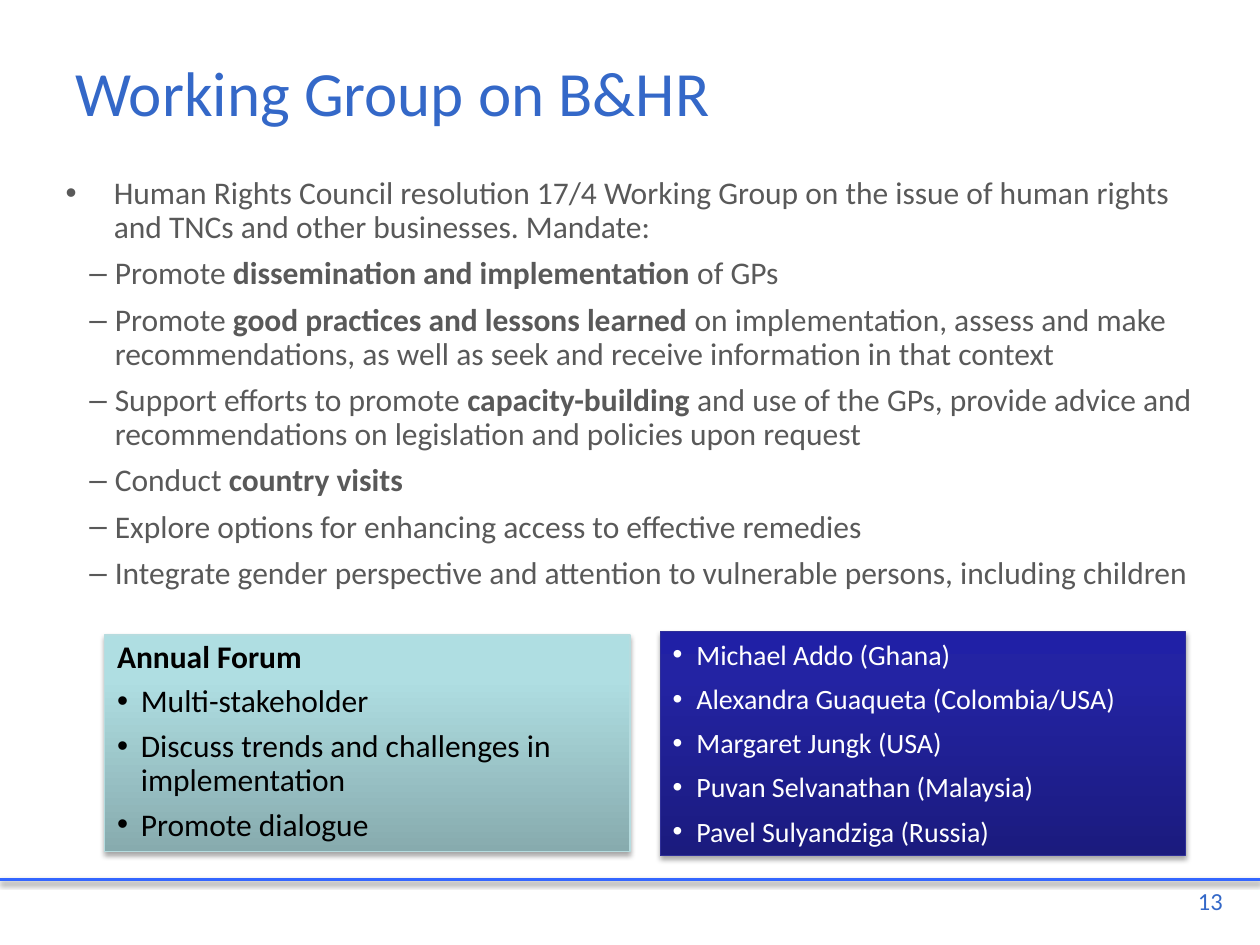
import lxml.etree
import pptx
import pptx.dml.color
import pptx.enum.shapes
import pptx.enum.text
import pptx.oxml
import pptx.oxml.ns
import pptx.util
from pptx.util import Cm, Pt

ANCHOR = pptx.enum.text.MSO_ANCHOR
ALIGN = pptx.enum.text.PP_ALIGN
FONT = "Calibri"
COLORS = {
    "title": "3468C8", "rule": "3366FF", "body": "595959",
    "white": "FFFFFF", "black": "000000",
    "navy edge": "2F2F98", "teal edge": "B6DCDF",
}
NAVY = [(0, "1B1B7E"), (80, "2323A3"), (100, "2020A6")]
TEAL = [(0, "87ABAE"), (80, "AFDEE2"), (100, "AFE0E4")]

LEAD = ("Human Rights Council resolution 17/4 Working Group on the issue of "
        "human rights and TNCs and other businesses. Mandate:")
# Every second part is bold.
TASKS = [
    ["Promote ", "dissemination and implementation ", "of GPs"],
    ["Promote ", "good practices and lessons learned ",
     "on implementation, assess and make recommendations, as well as seek "
     "and receive information in that context"],
    ["Support efforts to promote ", "capacity-building",
     " and use of the GPs, provide advice and recommendations on legislation "
     "and policies upon request"],
    ["Conduct ", "country visits"],
    ["Explore options for enhancing access to effective remedies"],
    ["Integrate gender perspective and attention to vulnerable persons, "
     "including children"],
]
FORUM = ["Multi-stakeholder", "Discuss trends and challenges in implementation",
         "Promote dialogue"]
PEOPLE = ["Michael Addo (Ghana)", "Alexandra Guaqueta (Colombia/USA)",
          "Margaret Jungk (USA)", "Puvan Selvanathan (Malaysia)",
          "Pavel Sulyandziga (Russia)"]


def rgb(name):
    return pptx.dml.color.RGBColor.from_string(COLORS[name])


def place(shape, box):
    shape.left, shape.top, shape.width, shape.height = (Cm(n) for n in box)


def style(run, size, color, bold=False):
    run.font.name = FONT
    run.font.size = Pt(size)
    run.font.bold = bold
    run.font.color.rgb = rgb(color)


def indent(para, mark, left, hang):
    """Give the paragraph a bullet that hangs to the left of its text."""
    props = para._p.get_or_add_pPr()
    props.set("marL", str(Cm(left)))
    props.set("indent", str(-Cm(hang)))
    sub = lxml.etree.SubElement
    sub(props, pptx.oxml.ns.qn("a:buFont")).set("typeface", "Arial")
    sub(props, pptx.oxml.ns.qn("a:buChar")).set("char", mark)


def add_para(frame, parts, first, gap, size, color, lines=1.0, bullet=None,
             bold=False):
    """Write one paragraph whose parts alternate between plain and bold."""
    para = frame.paragraphs[0] if first else frame.add_paragraph()
    if bullet:
        indent(para, *bullet)
    para.alignment = ALIGN.LEFT
    para.line_spacing = lines
    para.space_before = Pt(0 if first else gap)
    for i, part in enumerate(parts):
        run = para.add_run()
        run.text = part
        style(run, size, color, bold or i % 2 == 1)
    return para


def add_shadow(shape, alpha, dist):
    props = shape._element.spPr
    for old in props.findall(pptx.oxml.ns.qn("a:effectLst")):
        props.remove(old)
    props.append(pptx.oxml.parse_xml(
        f'<a:effectLst {pptx.oxml.ns.nsdecls("a")}>'
        f'<a:outerShdw blurRad="{Pt(3.1)}" dist="{Pt(dist)}" dir="5400000" '
        f'rotWithShape="0"><a:srgbClr val="{COLORS["black"]}">'
        f'<a:alpha val="{alpha * 1000}"/></a:srgbClr></a:outerShdw>'
        '</a:effectLst>'))


def add_fade(shape, stops):
    """Fill the shape with a gradient that runs from bottom to top."""
    marks = "".join(f'<a:gs pos="{pos * 1000}"><a:srgbClr val="{color}"/></a:gs>'
                    for pos, color in stops)
    shape._element.spPr.find(pptx.oxml.ns.qn("a:prstGeom")).addnext(
        pptx.oxml.parse_xml(
            f'<a:gradFill {pptx.oxml.ns.nsdecls("a")} rotWithShape="1">'
            f'<a:gsLst>{marks}</a:gsLst>'
            '<a:lin ang="16200000" scaled="0"/></a:gradFill>'))


def add_title(slide, box):
    title = slide.shapes.title
    place(title, box)
    frame = title.text_frame
    frame.text = "Working Group on B&HR"
    frame.vertical_anchor = ANCHOR.MIDDLE
    frame.paragraphs[0].alignment = ALIGN.LEFT
    style(frame.paragraphs[0].runs[0], 36, "title")


def add_list(slide, box):
    body = slide.placeholders[1]
    place(body, box)
    body.line.color.rgb = rgb("white")
    body.line.width = Pt(2)
    frame = body.text_frame
    frame.auto_size = pptx.enum.text.MSO_AUTO_SIZE.NONE
    add_para(frame, [LEAD], True, 7, 18, "body", 0.9, ("•", 0.97, 0.97))
    for task in TASKS:
        para = add_para(frame, task, False, 7, 18, "body", 0.9,
                        ("–", 0.99, 0.51))
        para.level = 1


def add_card(slide, box, stops, edge, items, size, color, lines, head=None):
    card = slide.shapes.add_shape(pptx.enum.shapes.MSO_SHAPE.RECTANGLE,
                                  *(Cm(n) for n in box))
    add_fade(card, stops)
    card.line.color.rgb = rgb(edge)
    card.line.width = Pt(0.75)
    add_shadow(card, 35, 1.8)
    frame = card.text_frame
    frame.word_wrap = True
    frame.vertical_anchor = ANCHOR.TOP
    if head:
        add_para(frame, [head], True, 6, size, color, lines, bold=True)
    for i, item in enumerate(items):
        add_para(frame, [item], i == 0 and not head, 6, size, color, lines,
                 ("•", 0.48, 0.48))


def add_footer(slide, box):
    left, top, width, height = box
    rule = slide.shapes.add_connector(
        pptx.enum.shapes.MSO_CONNECTOR.STRAIGHT,
        Cm(left), Cm(top), Cm(left + width), Cm(top))
    rule.line.color.rgb = rgb("rule")
    rule.line.width = Pt(2)
    add_shadow(rule, 38, 1.6)
    wide = 5.92
    page = slide.shapes.add_textbox(Cm(left + width - wide - 0.5), Cm(top),
                                    Cm(wide), Cm(height))
    page.text_frame.word_wrap = True
    para = page.text_frame.paragraphs[0]
    para.text = "13"
    para.alignment = ALIGN.RIGHT
    style(para.runs[0], 14, "title")


def main():
    deck = pptx.Presentation()
    deck.slide_width, deck.slide_height = Cm(25.4), Cm(19.05)
    slide = deck.slides.add_slide(deck.slide_layouts[1])
    add_footer(slide, (0, 17.73, 25.4, 1.32))
    add_title(slide, (1.27, 0.76, 22.86, 2.16))
    add_list(slide, (1.07, 3.45, 23.62, 13.69))
    add_card(slide, (13.31, 12.73, 10.59, 4.52), NAVY, "navy edge",
             PEOPLE, 16, "white", 1.0)
    add_card(slide, (2.11, 12.8, 10.59, 4.37), TEAL, "teal edge",
             FORUM, 18, "black", 0.9, "Annual Forum")
    deck.save("out.pptx")


if __name__ == "__main__":
    main()
